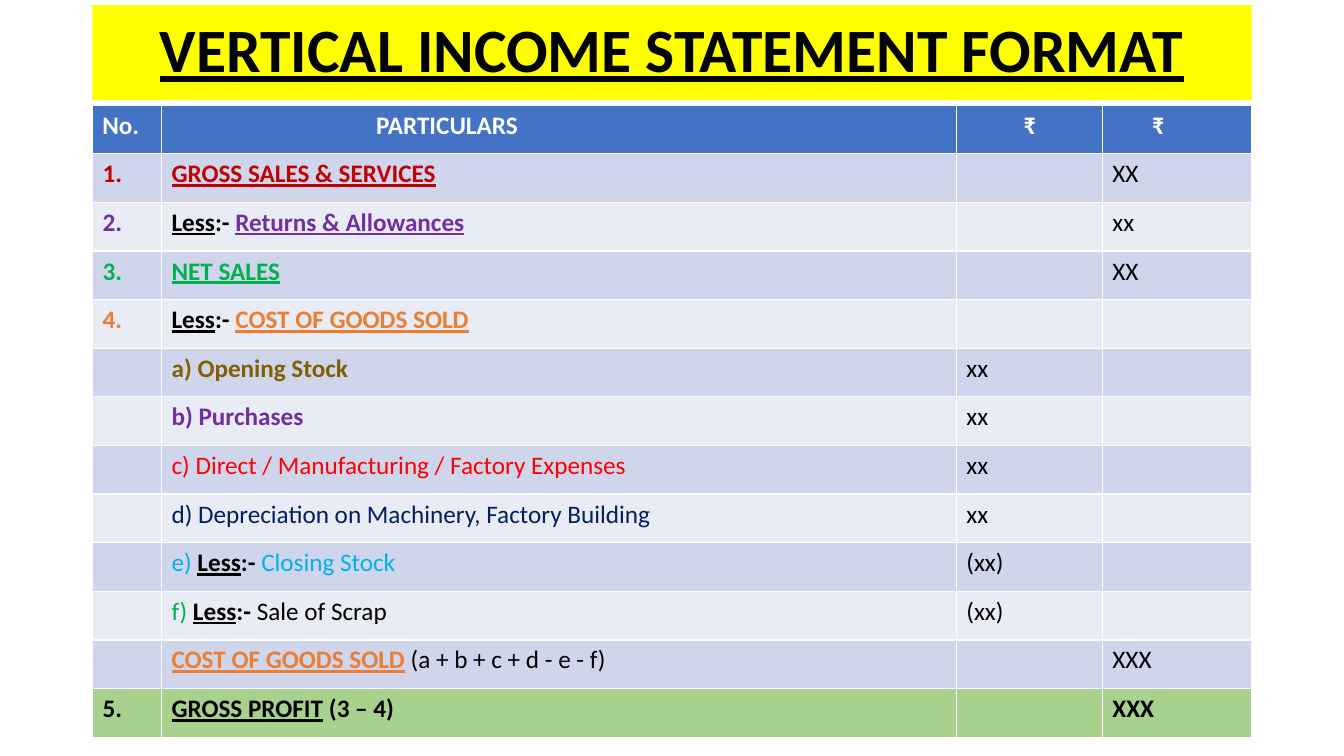
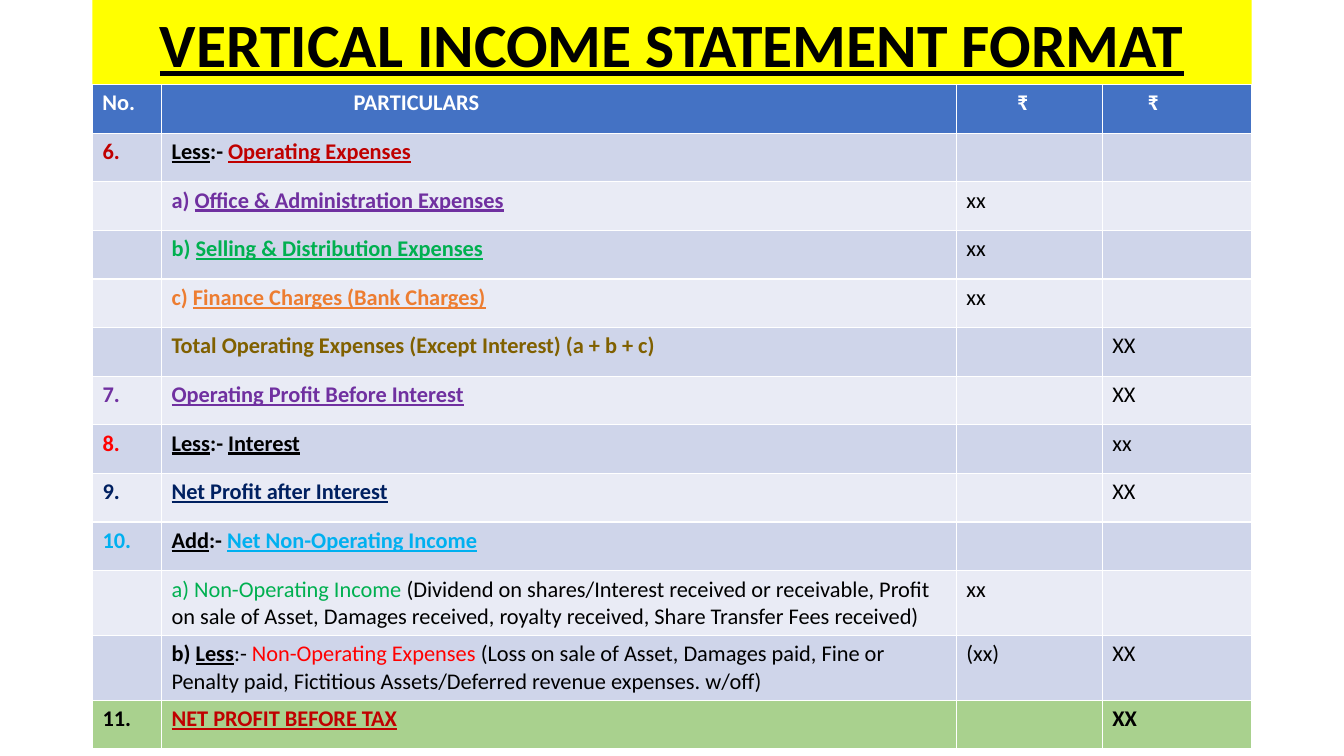
from dataclasses import dataclass

from pptx import Presentation
from pptx.dml.color import RGBColor
from pptx.enum.text import MSO_ANCHOR, PP_ALIGN
from pptx.util import Cm, Pt

FONT = "Calibri"
BLACK = RGBColor(0x00, 0x00, 0x00)
WHITE = RGBColor(0xFF, 0xFF, 0xFF)
YELLOW = RGBColor(0xFF, 0xFF, 0x00)
HEADER_BLUE = RGBColor(0x44, 0x72, 0xC4)
BAND_DARK = RGBColor(0xCF, 0xD5, 0xEA)
BAND_LIGHT = RGBColor(0xE9, 0xEB, 0xF5)
TOTAL_GREEN = RGBColor(0xA9, 0xD1, 0x8E)
CRIMSON = RGBColor(0xC0, 0x00, 0x00)
PURPLE = RGBColor(0x70, 0x30, 0xA0)
GREEN = RGBColor(0x00, 0xB0, 0x50)
ORANGE = RGBColor(0xED, 0x7D, 0x31)
OLIVE = RGBColor(0x80, 0x60, 0x00)
RED = RGBColor(0xFF, 0x00, 0x00)
NAVY = RGBColor(0x00, 0x20, 0x60)
SKY = RGBColor(0x00, 0xB0, 0xF0)

LEFT = Cm(2.33)
WIDTH = Cm(29.21)
TITLE_HEIGHT = Cm(2.39)
TABLE_HEIGHT = Cm(15.93)
COLUMN_WIDTHS = (1.74, 20.03, 3.68, 3.75)
HEADINGS = ("No.", "PARTICULARS", "₹", "₹")


@dataclass
class Span:
    text: str
    color: RGBColor = BLACK
    bold: bool = False
    underline: bool = False


def strong(text, color=BLACK):
    return Span(text, color, bold=True)


def heading(text, color=BLACK):
    return Span(text, color, bold=True, underline=True)


def adjust(word):
    return [heading(word), strong(":- ")]


@dataclass
class Entry:
    particulars: list
    number: str = ""
    number_color: RGBColor = BLACK
    inner: str = ""
    outer: str = ""


TRADING = [
    Entry([heading("GROSS SALES & SERVICES", CRIMSON)], "1.", CRIMSON, outer="XX"),
    Entry(adjust("Less") + [heading("Returns & Allowances", PURPLE)],
          "2.", PURPLE, outer="xx"),
    Entry([heading("NET SALES", GREEN)], "3.", GREEN, outer="XX"),
    Entry(adjust("Less") + [heading("COST OF GOODS SOLD", ORANGE)], "4.", ORANGE),
    Entry([strong("a) Opening Stock", OLIVE)], inner="xx"),
    Entry([strong("b) Purchases", PURPLE)], inner="xx"),
    Entry([Span("c) Direct / Manufacturing / Factory Expenses", RED)], inner="xx"),
    Entry([Span("d) Depreciation on Machinery, Factory Building", NAVY)], inner="xx"),
    Entry([Span("e) ", SKY), *adjust("Less"), Span("Closing Stock", SKY)], inner="(xx)"),
    Entry([Span("f) ", GREEN), *adjust("Less"), Span("Sale of Scrap")], inner="(xx)"),
    Entry([heading("COST OF GOODS SOLD", ORANGE), Span(" (a + b + c + d - e - f)")],
          outer="XXX"),
    Entry([heading("GROSS PROFIT"), strong(" (3 – 4)")], "5.", outer="XXX"),
]

OPERATING = [
    Entry(adjust("Less") + [heading("Operating Expenses", CRIMSON)], "6.", CRIMSON),
    Entry([strong("a) ", PURPLE), heading("Office & Administration Expenses", PURPLE)],
          inner="xx"),
    Entry([strong("b) ", GREEN), heading("Selling & Distribution Expenses", GREEN)],
          inner="xx"),
    Entry([strong("c) ", ORANGE), heading("Finance Charges (Bank Charges)", ORANGE)],
          inner="xx"),
    Entry([strong("Total Operating Expenses (Except Interest) (a + b + c)", OLIVE)],
          outer="XX"),
    Entry([heading("Operating Profit Before Interest", PURPLE)], "7.", PURPLE, outer="XX"),
    Entry(adjust("Less") + [heading("Interest")], "8.", RED, outer="xx"),
    Entry([heading("Net Profit after Interest", NAVY)], "9.", NAVY, outer="XX"),
    Entry(adjust("Add") + [heading("Net Non-Operating Income", SKY)], "10.", SKY),
    Entry([Span("a) Non-Operating Income ", GREEN),
           Span("(Dividend on shares/Interest received or receivable, Profit on sale of "
                "Asset, Damages received, royalty received, Share Transfer Fees received)")],
          inner="xx"),
    Entry([strong("b) "), heading("Less"), Span(":- "),
           Span("Non-Operating Expenses ", RED),
           Span("(Loss on sale of Asset, Damages paid, Fine or Penalty paid, "
                "Fictitious Assets/Deferred revenue expenses. w/off)")],
          inner="(xx)", outer="XX"),
    Entry([heading("NET PROFIT BEFORE TAX", CRIMSON)], "11.", outer="XX"),
]


def style_font(font, span):
    font.color.rgb = span.color
    font.bold = span.bold
    font.underline = span.underline


def write_cell(cell, spans, size, fill):
    cell.fill.solid()
    cell.fill.fore_color.rgb = fill
    paragraph = cell.text_frame.paragraphs[0]
    paragraph.font.name = FONT
    paragraph.font.size = Pt(size)
    for span in spans:
        run = paragraph.add_run()
        run.text = span.text
        style_font(paragraph.font if len(spans) == 1 else run.font, span)


def add_title(slide, top):
    title = slide.shapes.title
    title.left, title.top, title.width, title.height = LEFT, top, WIDTH, TITLE_HEIGHT
    title.fill.solid()
    title.fill.fore_color.rgb = YELLOW
    title.text_frame.vertical_anchor = MSO_ANCHOR.MIDDLE
    paragraph = title.text_frame.paragraphs[0]
    paragraph.text = "VERTICAL INCOME STATEMENT FORMAT"
    paragraph.alignment = PP_ALIGN.CENTER
    paragraph.line_spacing = 0.9
    paragraph.font.name = FONT
    paragraph.font.size = Pt(44)
    style_font(paragraph.font, heading(""))


def add_statement(slide, top, size, heading_indents, entries):
    table = slide.shapes.add_table(
        len(entries) + 1, len(HEADINGS), LEFT, top, WIDTH, TABLE_HEIGHT).table
    for column, width in zip(table.columns, COLUMN_WIDTHS):
        column.width = Cm(width)
    for cell, text, indent in zip(table.rows[0].cells, HEADINGS, heading_indents):
        cell.margin_left = Cm(indent)
        write_cell(cell, [strong(text, WHITE)], size, HEADER_BLUE)
    for index, entry in enumerate(entries):
        is_total = index == len(entries) - 1
        fill = TOTAL_GREEN if is_total else (BAND_DARK, BAND_LIGHT)[index % 2]
        contents = (
            [strong(entry.number, entry.number_color)],
            entry.particulars,
            [Span(entry.inner, bold=is_total)],
            [Span(entry.outer, bold=is_total)],
        )
        for cell, spans in zip(table.rows[index + 1].cells, contents):
            write_cell(cell, [span for span in spans if span.text], size, fill)


def add_statement_slide(deck, title_top, table_top, size, heading_indents, entries):
    slide = deck.slides.add_slide(deck.slide_layouts[5])
    add_title(slide, Cm(title_top))
    add_statement(slide, Cm(table_top), size, heading_indents, entries)


def main():
    deck = Presentation()
    deck.slide_width, deck.slide_height = Cm(33.87), Cm(19.05)
    add_statement_slide(deck, 0.13, 2.65, 18, (0.25, 5.41, 1.69, 1.25), TRADING)
    add_statement_slide(deck, 0, 2.13, 16, (0.25, 4.84, 1.53, 1.14), OPERATING)
    deck.save("out.pptx")


if __name__ == "__main__":
    main()
